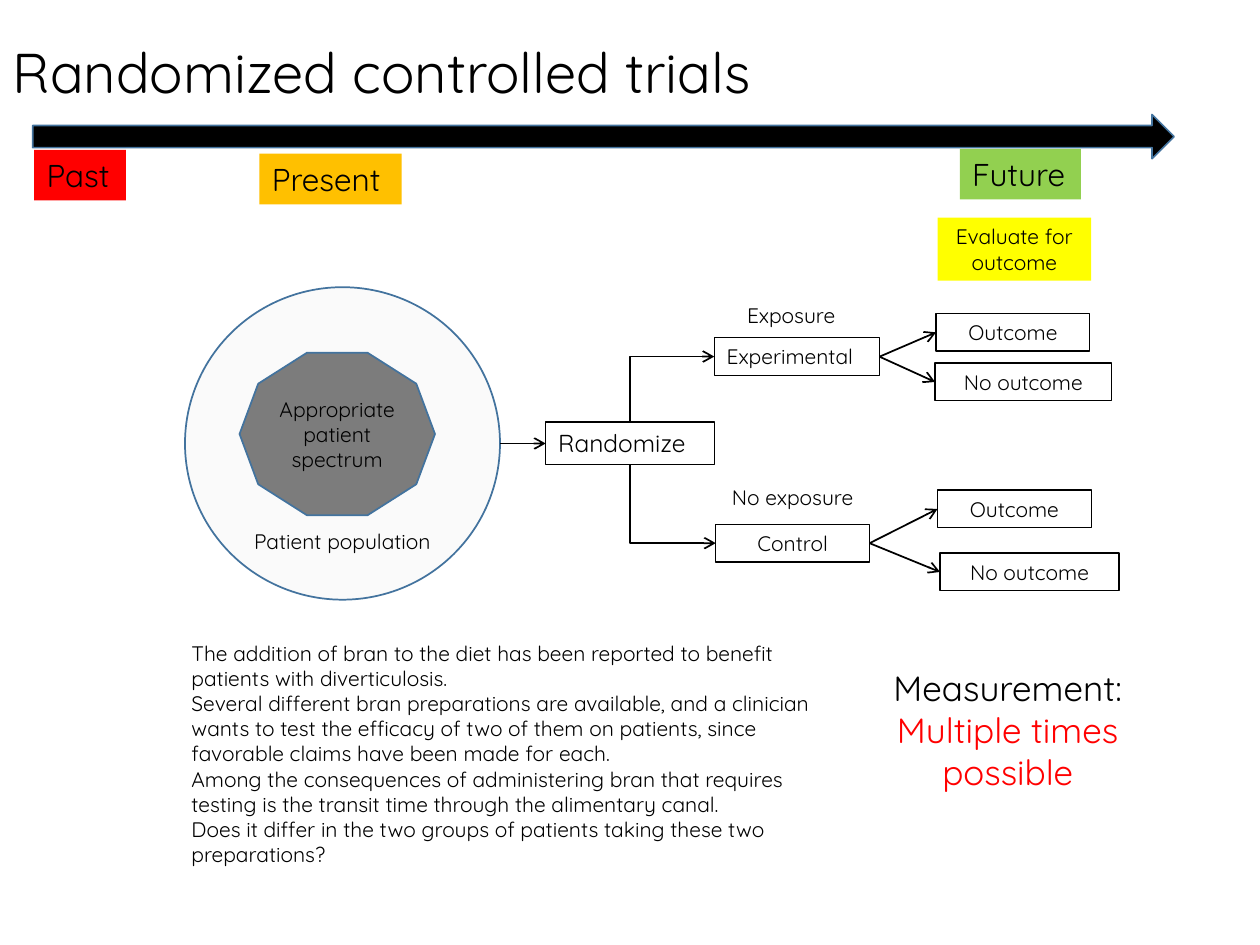
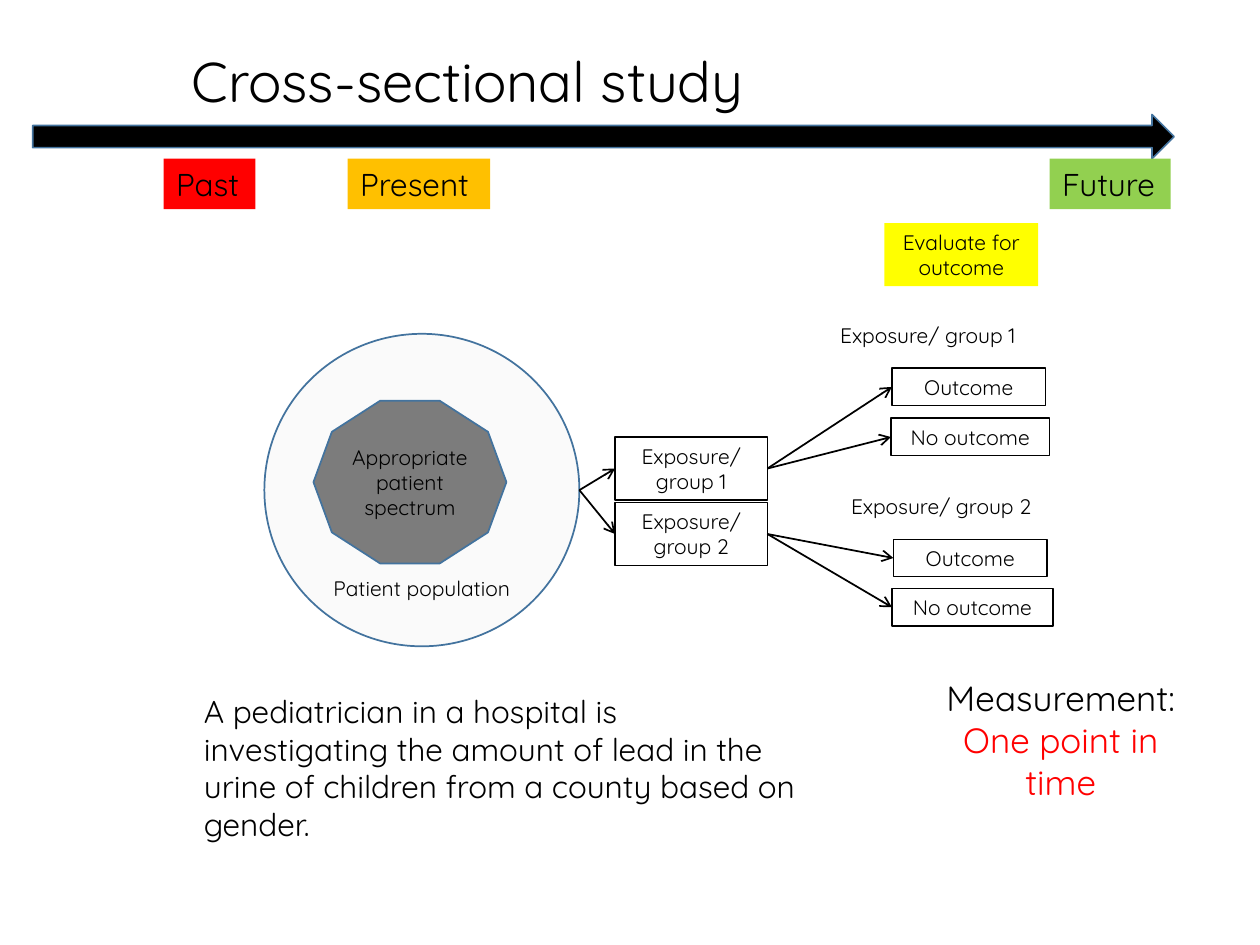
from lxml.etree import SubElement
from pptx import Presentation
from pptx.dml.color import RGBColor
from pptx.enum.shapes import MSO_CONNECTOR as Link, MSO_SHAPE as Kind
from pptx.enum.text import MSO_ANCHOR as Anchor, PP_ALIGN as Align
from pptx.oxml.ns import qn
from pptx.util import Cm, Pt

BLACK = RGBColor(0, 0, 0)
RED = RGBColor(0xFF, 0, 0)
AMBER = RGBColor(0xFF, 0xC0, 0)
GREEN = RGBColor(0x92, 0xD0, 0x50)
YELLOW = RGBColor(0xFF, 0xFF, 0)
PALE = RGBColor(0xFA, 0xFA, 0xFA)
GREY = RGBColor(0x7C, 0x7C, 0x7C)
BLUE = RGBColor(0x43, 0x73, 0x9E)

TAGS = (("Past", 1.85, RED), ("Present", 2.87, AMBER), ("Future", 2.44, GREEN))
ROW = 0.76  # height of a one-line box


class Deck:
    font = "Quicksand"

    def __init__(self):
        self.prs = Presentation()
        self.prs.slide_width, self.prs.slide_height = Cm(25.4), Cm(19.05)
        self.shapes = None

    def start(self, title, left, top):
        """Add a slide with its title and the time arrow."""
        slide = self.prs.slides.add_slide(self.prs.slide_layouts[6])
        self.shapes = slide.shapes
        head = self.text(title, left, top, 21.59, 2.03, size=32, align=Align.LEFT)
        head.text_frame.vertical_anchor = Anchor.MIDDLE
        head.text_frame.paragraphs[0].line_spacing = 0.9
        self.shape(Kind.RIGHT_ARROW, 0.66, 2.31, 23.01, 0.89, BLACK, BLUE)

    def label(self, shape, text, size, align, anchor=Anchor.TOP):
        frame = shape.text_frame
        frame.word_wrap = True
        frame.vertical_anchor = anchor
        frame.text = text
        for par in frame.paragraphs:
            par.alignment = align
            par.font.name, par.font.size = self.font, Pt(size)
            par.font.color.rgb = BLACK

    def text(self, text, left, top, width, height=ROW, size=12, align=Align.CENTER):
        box = self.shapes.add_textbox(Cm(left), Cm(top), Cm(width), Cm(height))
        self.label(box, text, size, align)
        return box

    def shape(self, kind, left, top, width, height, fill=None, line=None, weight=1):
        shape = self.shapes.add_shape(kind, Cm(left), Cm(top), Cm(width), Cm(height))
        shape.shadow.inherit = False
        if fill is None:
            shape.fill.background()
        else:
            shape.fill.solid()
            shape.fill.fore_color.rgb = fill
        if line is None:
            shape.line.fill.background()
        else:
            shape.line.color.rgb = line
            shape.line.width = Pt(weight)
        return shape

    def node(self, text, left, top, width, height=ROW, size=12, align=Align.CENTER):
        box = self.shape(Kind.RECTANGLE, left, top, width, height, None, BLACK, 0.75)
        self.label(box, text, size, align)
        return box

    def tags(self, *spots):
        for (text, width, fill), (left, top) in zip(TAGS, spots):
            tag = self.shape(Kind.RECTANGLE, left, top, width, 1.02, fill)
            self.label(tag, text, 18, Align.LEFT)

    def check(self, left, top):
        box = self.shape(Kind.RECTANGLE, left, top, 3.1, 1.27, YELLOW)
        self.label(box, "Evaluate for outcome", 12, Align.CENTER)

    def people(self, left, top, inner):
        """Draw the population circle with the spectrum, placed by inner, in it."""
        ring = self.shape(Kind.OVAL, left, top, 6.35, 6.3, PALE, BLUE)
        self.label(ring, "Patient population", 12, Align.CENTER, Anchor.BOTTOM)
        ring.text_frame.margin_bottom = 0
        core = self.shape(Kind.DECAGON, *inner, GREY, BLUE)
        self.label(core, "Appropriate patient spectrum", 12, Align.CENTER, Anchor.MIDDLE)
        return ring

    def measure(self, answer, left, top):
        box = self.text("Measurement: ", left, top, 5.89, 2.82, size=20)
        run = box.text_frame.paragraphs[0].add_run()
        run.text = answer
        run.font.color.rgb = RED

    def wire(self, kind, *ends):
        line = self.shapes.add_connector(kind, *ends)
        line.line.color.rgb = BLACK
        line.line.width = Pt(1)
        props = line._element.spPr
        SubElement(props.find(qn("a:ln")), qn("a:tailEnd"), type="arrow")
        SubElement(props, qn("a:effectLst"))
        return line

    def link(self, start, *ends):
        """Run arrows from the right of start to the left of each end."""
        for end in ends:
            line = self.wire(Link.STRAIGHT,
                             start.left + start.width, start.top + start.height // 2,
                             end.left, end.top + end.height // 2)
            if start.auto_shape_type == Kind.RECTANGLE:
                line.begin_connect(start, 3)
            line.end_connect(end, 1)

    def bend(self, start, end):
        """Run a one-corner arrow from the top or bottom of start to the left of end."""
        rise = end.top < start.top
        x = start.left + start.width // 2
        y = start.top if rise else start.top + start.height
        goal = end.top + end.height // 2
        line = self.wire(Link.ELBOW, x, y, end.left, goal)
        line.begin_connect(start, 0 if rise else 2)
        line.end_connect(end, 1)
        # The corner shape is stored lying on its side, so width and height swap.
        wide, high = abs(goal - y), end.left - x
        line.left = (x + end.left - wide) // 2
        line.top = (y + goal - high) // 2
        line.width, line.height = wide, high
        props = line._element.spPr
        props.find(qn("a:prstGeom")).set("prst", "bentConnector2")
        frame = props.find(qn("a:xfrm"))
        frame.set("rot", str((90 if rise else 270) * 60000))
        frame.set("flipH", "1")
        frame.set("flipV", "1" if rise else "0")

    def fork(self, start, yes, no):
        """Lead start to an outcome and a no-outcome box, each (left, top, width)."""
        self.link(start, self.node("Outcome", *yes), self.node("No outcome", *no))


def trial(deck):
    deck.start("Randomized controlled trials", 0, 0.51)
    deck.tags((0.69, 3.02), (5.23, 3.1), (19.35, 3))
    deck.check(18.9, 4.39)
    ring = deck.people(3.73, 5.79, (4.83, 7.11, 3.94, 3.28))
    split = deck.node("Randomize", 11, 8.51, 3.4, 0.86, 14, Align.LEFT)
    deck.link(ring, split)
    deck.text("Exposure", 14.4, 5.97, 3.1)
    deck.text("No exposure", 14.43, 9.65, 3.1)
    test = deck.node("Experimental", 14.4, 6.81, 3.33, align=Align.LEFT)
    control = deck.node("Control", 14.43, 10.57, 3.1)
    deck.bend(split, test)
    deck.bend(split, control)
    deck.fork(test, (18.87, 6.32, 3.1), (18.85, 7.32, 3.56))
    deck.fork(control, (18.9, 9.88, 3.1), (18.95, 11.15, 3.61))
    deck.measure("Multiple times possible", 17.37, 13.31)
    deck.text(
        "The addition of bran to the diet has been reported to benefit patients "
        "with diverticulosis.\n"
        "Several different bran preparations are available, and a clinician wants "
        "to test the efficacy of two of them on patients, since favorable claims "
        "have been made for each.\n"
        "Among the consequences of administering bran that requires testing is "
        "the transit time through the alimentary canal.\n"
        "Does it differ in the two groups of patients taking these two preparations?",
        3.61, 12.78, 13.36, 4.88, align=Align.LEFT)


def survey(deck):
    deck.start("Cross-sectional study", 3.61, 0.69)
    deck.tags((3.3, 3.2), (7.01, 3.2), (21.16, 3.2))
    deck.check(17.83, 4.5)
    ring = deck.people(5.33, 6.73, (6.32, 8.08, 3.89, 3.28))
    first = deck.node("Exposure/\ngroup 1", 12.4, 8.81, 3.07, 1.27)
    second = deck.node("Exposure/ group 2", 12.4, 10.13, 3.07, 1.27)
    deck.link(ring, first, second)
    deck.text("Exposure/ group 1", 16.23, 6.38, 4.95)
    deck.text("Exposure/ group 2", 16.74, 9.83, 4.47)
    deck.fork(first, (17.98, 7.42, 3.1), (17.96, 8.43, 3.2))
    deck.fork(second, (18.01, 10.87, 3.1), (17.98, 11.86, 3.25))
    deck.measure("One point in time", 18.44, 13.51)
    deck.text(
        "A pediatrician in a hospital is investigating the amount of lead in the "
        "urine of children from a county based on gender.",
        3.86, 13.82, 12.7, 3.33, 18, Align.LEFT)


def main():
    deck = Deck()
    trial(deck)
    survey(deck)
    deck.prs.save("out.pptx")


if __name__ == "__main__":
    main()
